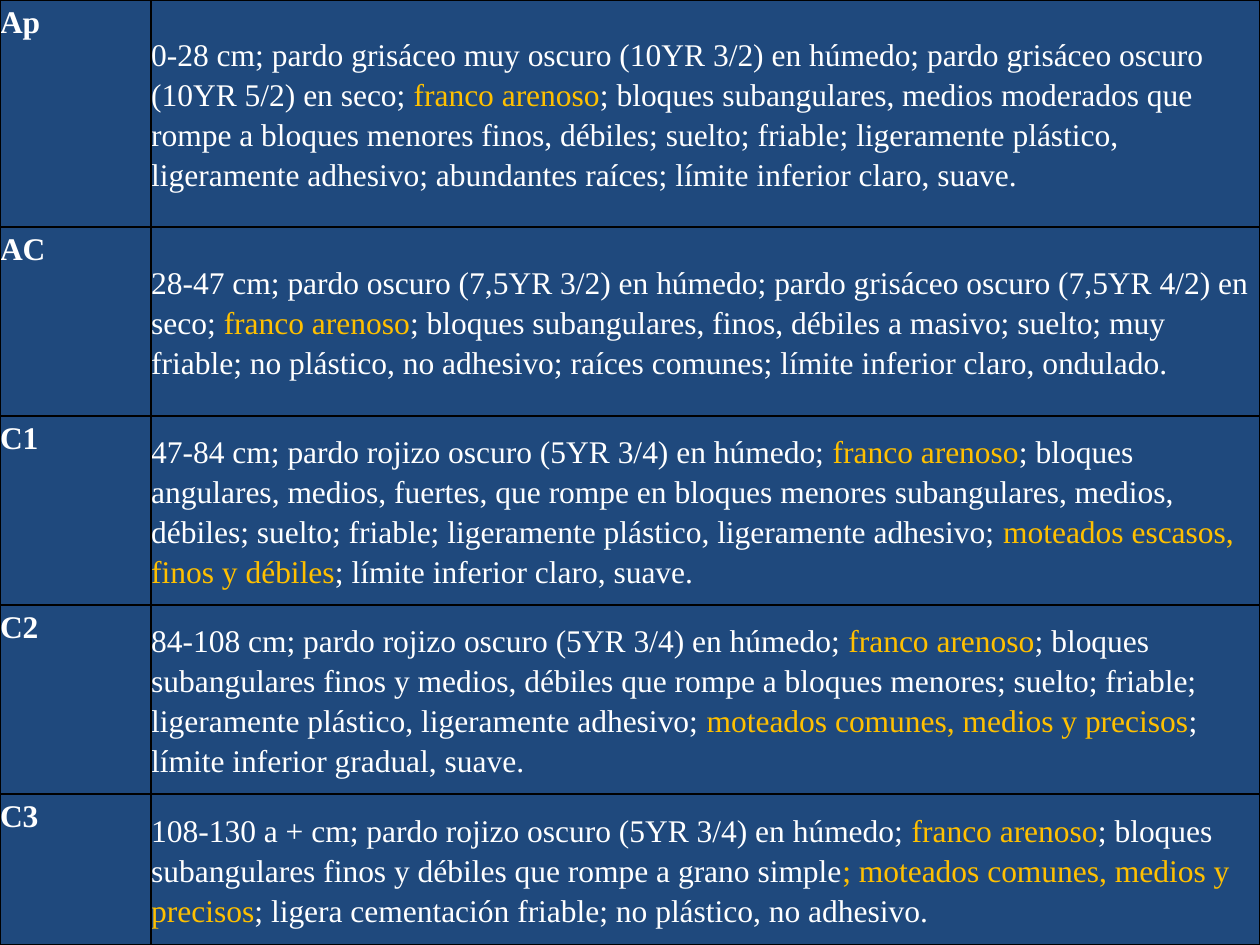
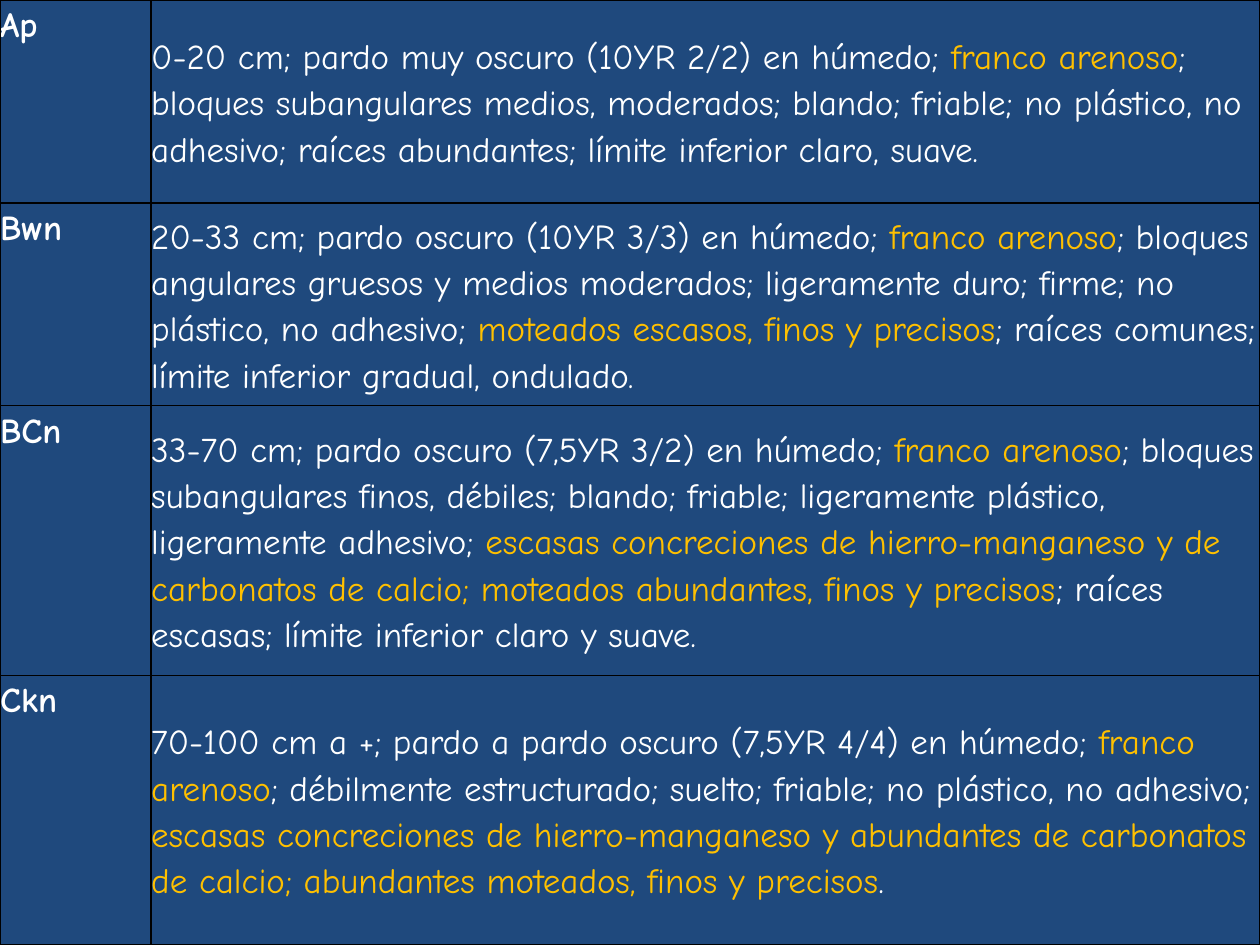
from dataclasses import dataclass

from lxml.etree import SubElement
from pptx import Presentation
from pptx.dml.color import RGBColor as RGB
from pptx.enum.text import MSO_ANCHOR as Anchor
from pptx.oxml.ns import qn
from pptx.util import Inches, Pt


@dataclass(frozen=True)
class Theme:
    background: str = "1F497D"
    text: str = "FFFFFF"
    highlight: str = "FFC000"
    border: str = "000000"
    border_width: float = 1
    line_spacing: float = 1.15
    space_after: float = 10
    serif: tuple = ("Times New Roman", 18)
    handwritten: tuple = ("Comic Neue", 20)


THEME = Theme()
PAGE = (0, 0, 10, 7.5)
NAME_WIDTH = 1.2

# Each horizon: name, row height in inches, description with *highlights*.
FIRST_PROFILE = [
    ("Ap", 1.8,
     "0-28 cm; pardo grisáceo muy oscuro (10YR 3/2) en húmedo; pardo grisáceo oscuro "
     "(10YR 5/2) en seco; *franco arenoso*; bloques subangulares, medios moderados que "
     "rompe a bloques menores finos, débiles; suelto; friable; ligeramente plástico, "
     "ligeramente adhesivo; abundantes raíces; límite inferior claro, suave."),
    ("AC", 1.5,
     "28-47 cm; pardo oscuro (7,5YR 3/2) en húmedo; pardo grisáceo oscuro (7,5YR 4/2) en "
     "seco; *franco arenoso*; bloques subangulares, finos, débiles a masivo; suelto; muy "
     "friable; no plástico, no adhesivo; raíces comunes; límite inferior claro, ondulado."),
    ("C1", 1.5,
     "47-84 cm; pardo rojizo oscuro (5YR 3/4) en húmedo; *franco arenoso*; bloques "
     "angulares, medios, fuertes, que rompe en bloques menores subangulares, medios, "
     "débiles; suelto; friable; ligeramente plástico, ligeramente adhesivo; "
     "*moteados escasos, finos y débiles*; límite inferior claro, suave."),
    ("C2", 1.5,
     "84-108 cm; pardo rojizo oscuro (5YR 3/4) en húmedo; *franco arenoso*; bloques "
     "subangulares finos y medios, débiles que rompe a bloques menores; suelto; friable; "
     "ligeramente plástico, ligeramente adhesivo; *moteados comunes, medios y precisos*; "
     "límite inferior gradual, suave."),
    ("C3", 1.2,
     "108-130 a + cm; pardo rojizo oscuro (5YR 3/4) en húmedo; *franco arenoso*; bloques "
     "subangulares finos y débiles que rompe a grano simple*; moteados comunes, medios y "
     "precisos*; ligera cementación friable; no plástico, no adhesivo."),
]

SECOND_PROFILE = [
    ("Ap", 1.61,
     "0-20 cm; pardo muy oscuro (10YR 2/2) en húmedo; *franco arenoso*; bloques "
     "subangulares medios, moderados; blando; friable; no plástico, no adhesivo; raíces "
     "abundantes; límite inferior claro, suave."),
    ("Bwn", 1.61,
     "20-33 cm; pardo oscuro (10YR 3/3) en húmedo; *franco arenoso*; bloques angulares "
     "gruesos y medios moderados; ligeramente duro; firme; no plástico, no adhesivo; "
     "*moteados escasos, finos y precisos*; raíces comunes; límite inferior gradual, "
     "ondulado."),
    ("BCn", 2.14,
     "33-70 cm; pardo oscuro (7,5YR 3/2) en húmedo; *franco arenoso*; bloques "
     "subangulares finos, débiles; blando; friable; ligeramente plástico, ligeramente "
     "adhesivo; *escasas concreciones de hierro-manganeso y de carbonatos de calcio; "
     "moteados abundantes, finos y precisos*; raíces escasas; límite inferior claro y "
     "suave."),
    ("Ckn", 2.14,
     "70-100 cm a +; pardo a pardo oscuro (7,5YR 4/4) en húmedo; *franco arenoso*; "
     "débilmente estructurado; suelto; friable; no plástico, no adhesivo; *escasas "
     "concreciones de hierro-manganeso y abundantes de carbonatos de calcio; abundantes "
     "moteados, finos y precisos*."),
]


def write(tf, text, *, font, size, bold=False):
    """Fill the first paragraph, colouring the parts between asterisks."""
    p = tf.paragraphs[0]
    p.line_spacing = THEME.line_spacing
    p.space_after = Pt(THEME.space_after)
    for i, part in enumerate(text.split("*")):
        r = p.add_run()
        r.text = part
        r.font.name, r.font.size, r.font.bold = font, Pt(size), bold
        r.font.color.rgb = RGB.from_string(THEME.highlight if i % 2 else THEME.text)


def style_cell(cell, anchor):
    cell.margin_left = cell.margin_right = cell.margin_top = cell.margin_bottom = 0
    cell.vertical_anchor = anchor
    tc_pr = cell._tc.get_or_add_tcPr()
    for side in ("lnL", "lnR", "lnT", "lnB"):
        ln = SubElement(tc_pr, qn(f"a:{side}"), w=str(Pt(THEME.border_width)))
        fill = SubElement(ln, qn("a:solidFill"))
        SubElement(fill, qn("a:srgbClr"), val=THEME.border)
    cell.fill.background()


def add_horizon_table(slide, box, horizons, font, size):
    left, top, width, height = map(Inches, box)
    table = slide.shapes.add_table(len(horizons), 2, left, top, width, height).table
    table.first_row = table.horz_banding = False
    table.columns[0].width = Inches(NAME_WIDTH)
    table.columns[1].width = width - Inches(NAME_WIDTH)
    for row, (name, row_height, description) in zip(table.rows, horizons):
        row.height = Inches(row_height)
        name_cell, description_cell = row.cells
        style_cell(name_cell, Anchor.TOP)
        style_cell(description_cell, Anchor.MIDDLE)
        write(name_cell.text_frame, name, font=font, size=size, bold=True)
        write(description_cell.text_frame, description, font=font, size=size)


def add_profile_slide(prs, horizons, typeface):
    slide = prs.slides.add_slide(prs.slide_layouts[6])
    fill = slide.background.fill
    fill.solid()
    fill.fore_color.rgb = RGB.from_string(THEME.background)
    add_horizon_table(slide, PAGE, horizons, *typeface)


def main():
    prs = Presentation()
    prs.slide_width, prs.slide_height = map(Inches, PAGE[2:])
    add_profile_slide(prs, FIRST_PROFILE, THEME.serif)
    add_profile_slide(prs, SECOND_PROFILE, THEME.handwritten)
    prs.save("out.pptx")


if __name__ == "__main__":
    main()
